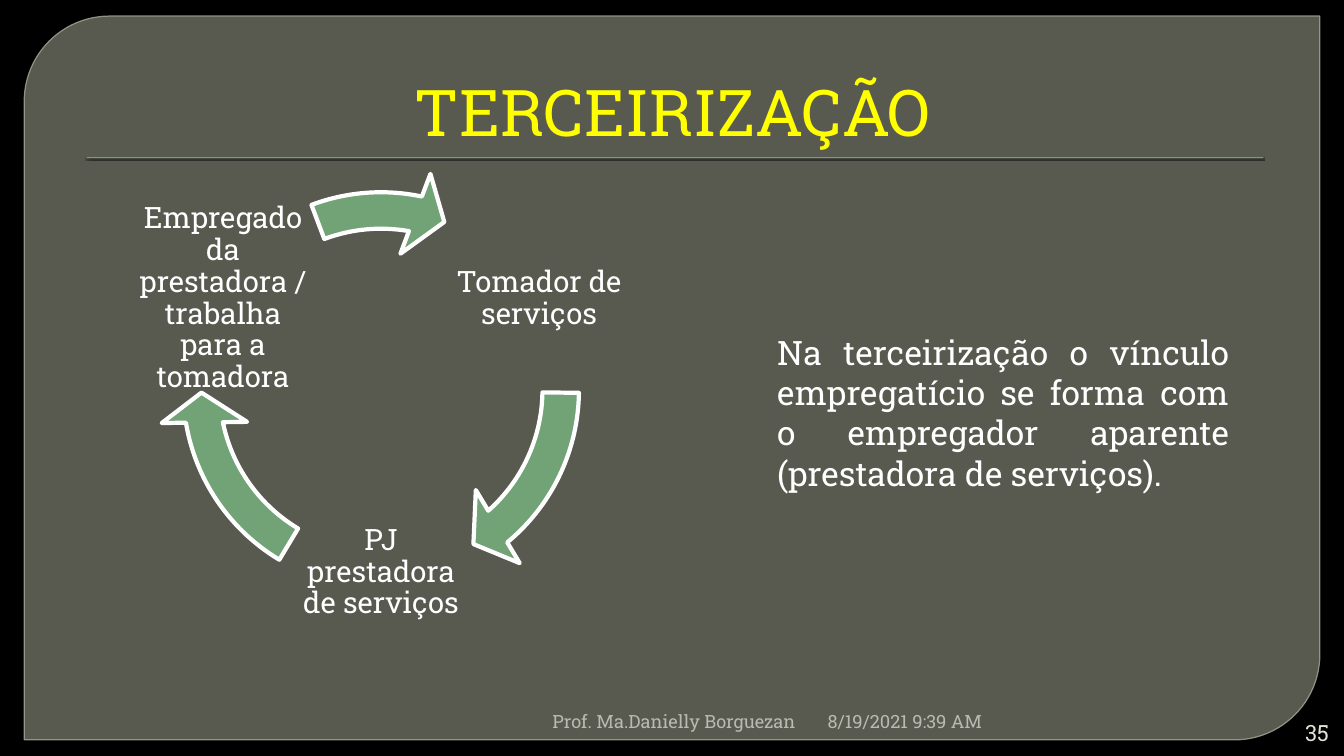
import math

import pptx
import pptx.dml.color
import pptx.enum.shapes
import pptx.enum.text
import pptx.oxml
import pptx.util
from pptx.util import Inches

SHAPE = pptx.enum.shapes.MSO_SHAPE
ALIGN = pptx.enum.text.PP_ALIGN
ANCHOR = pptx.enum.text.MSO_ANCHOR
NS = 'xmlns:a="http://schemas.openxmlformats.org/drawingml/2006/main"'

FONT = "Roboto Slab"
WHITE, GREEN, GREY = "FFFFFF", "72A376", "B9BBB2"

heading = "TERCEIRIZAÇÃO"
cycle = [
    ("Tomador de serviços", -30, (0.81, 49.48)),
    ("PJ prestadora de serviços", 90, (120.94, 169.61)),
    ("Empregado da prestadora / trabalha para a tomadora", 210, (249.4, 281.02)),
]
explanation = (
    "Na terceirização o vínculo empregatício se forma com o empregador "
    "aparente (prestadora de serviços)."
)
footers = [
    ("8/19/2021 9:39 AM", (8.11, 7, 4.38, 0.3), 13, GREY, ALIGN.LEFT, ANCHOR.TOP),
    ("Prof. Ma.Danielly Borguezan ", (1.89, 7, 6.14, 0.3), 13, GREY, ALIGN.RIGHT, ANCHOR.TOP),
    ("35", (12.6, 7.12, 0.68, 0.3), 16, "E0E0D4", ALIGN.RIGHT, ANCHOR.MIDDLE),
]

CENTER_X, CENTER_Y = 3.78, 3.87
LABEL_RADIUS, LABEL_SIZE, RING_SIZE = 1.81, 1.86, 4.41
DEGREE = 0.6


def color(hex_string):
    return pptx.dml.color.RGBColor.from_string(hex_string)


def square(x, y, size):
    return x - size / 2, y - size / 2, size, size


def set_alpha(fill, percent):
    alpha = pptx.oxml.parse_xml(f'<a:alpha {NS} val="{percent * 1000}"/>')
    fill._xPr.find(".//{*}srgbClr").append(alpha)


def write(frame, text, size, hex_string, align, anchor):
    frame.word_wrap = True
    frame.auto_size = pptx.enum.text.MSO_AUTO_SIZE.NONE
    frame.vertical_anchor = anchor
    frame.text = text
    paragraph = frame.paragraphs[0]
    paragraph.alignment = align
    paragraph.font.name = FONT
    paragraph.font.size = pptx.util.Pt(size)
    paragraph.font.color.rgb = color(hex_string)
    return paragraph


def add_text(slide, text, box, size, hex_string, align, anchor, inset=None):
    frame = slide.shapes.add_textbox(*map(Inches, box)).text_frame
    if inset is not None:
        frame.margin_left = frame.margin_right = Inches(inset)
        frame.margin_top = frame.margin_bottom = Inches(inset)
    return write(frame, text, size, hex_string, align, anchor)


def add_shape(slide, preset, box, fill, line=None, width=0):
    shape = slide.shapes.add_shape(preset, *map(Inches, box))
    shape.shadow.inherit = False
    shape.fill.solid()
    shape.fill.fore_color.rgb = color(fill)
    if line:
        shape.line.color.rgb = color(line)
        shape.line.width = pptx.util.Pt(width)
    else:
        shape.line.fill.background()
    return shape


def add_backdrop(slide):
    slide.background.fill.solid()
    slide.background.fill.fore_color.rgb = color("000000")
    panel = add_shape(slide, SHAPE.ROUND_2_DIAG_RECTANGLE, (0.24, 0.16, 12.85, 7.18),
                      "888B7B", "9DA090", 0.87)
    panel.adjustments[0] = 0.118
    panel.adjustments[1] = 0
    set_alpha(panel.fill, 65)
    set_alpha(panel.line.fill, 88)
    rule = add_shape(slide, SHAPE.RECTANGLE, (0.86, 1.56, 11.67, 0.01), GREEN)
    rule._element.spPr.find("{*}effectLst").append(pptx.oxml.parse_xml(
        f'<a:outerShdw {NS} blurRad="12700" dist="12700" dir="5400000" rotWithShape="0">'
        '<a:srgbClr val="000000"><a:alpha val="75000"/></a:srgbClr></a:outerShdw>'))


def add_heading(slide):
    title = slide.shapes.title
    title.left, title.top, title.width, title.height = map(Inches, (0.67, 0.28, 12, 1.25))
    write(title.text_frame, heading, 46, "FFFF00", ALIGN.CENTER, ANCHOR.BOTTOM)
    title._element.getparent().append(title._element)


def add_cycle(slide):
    for label, angle, (start, end) in cycle:
        x = CENTER_X + LABEL_RADIUS * math.cos(math.radians(angle))
        y = CENTER_Y + LABEL_RADIUS * math.sin(math.radians(angle))
        paragraph = add_text(slide, label, square(x, y, LABEL_SIZE), 21, WHITE,
                             ALIGN.CENTER, ANCHOR.MIDDLE, 0.03)
        paragraph.line_spacing = 0.9
        arrow = add_shape(slide, SHAPE.CIRCULAR_ARROW,
                          square(CENTER_X, CENTER_Y, RING_SIZE), GREEN, WHITE, 3)
        bends = (0.082, 9.585 * DEGREE, end * DEGREE, start * DEGREE, 0.096)
        for index, bend in enumerate(bends):
            arrow.adjustments[index] = bend


def main():
    deck = pptx.Presentation()
    deck.slide_width, deck.slide_height = Inches(13.33), Inches(7.5)
    slide = deck.slides.add_slide(deck.slide_layouts[5])
    add_backdrop(slide)
    add_heading(slide)
    add_cycle(slide)
    for footer in footers:
        add_text(slide, *footer)
    add_text(slide, explanation, (7.61, 3.24, 4.68, 1.72), 24, WHITE,
             ALIGN.JUSTIFY, ANCHOR.TOP)
    deck.save("out.pptx")


if __name__ == "__main__":
    main()
